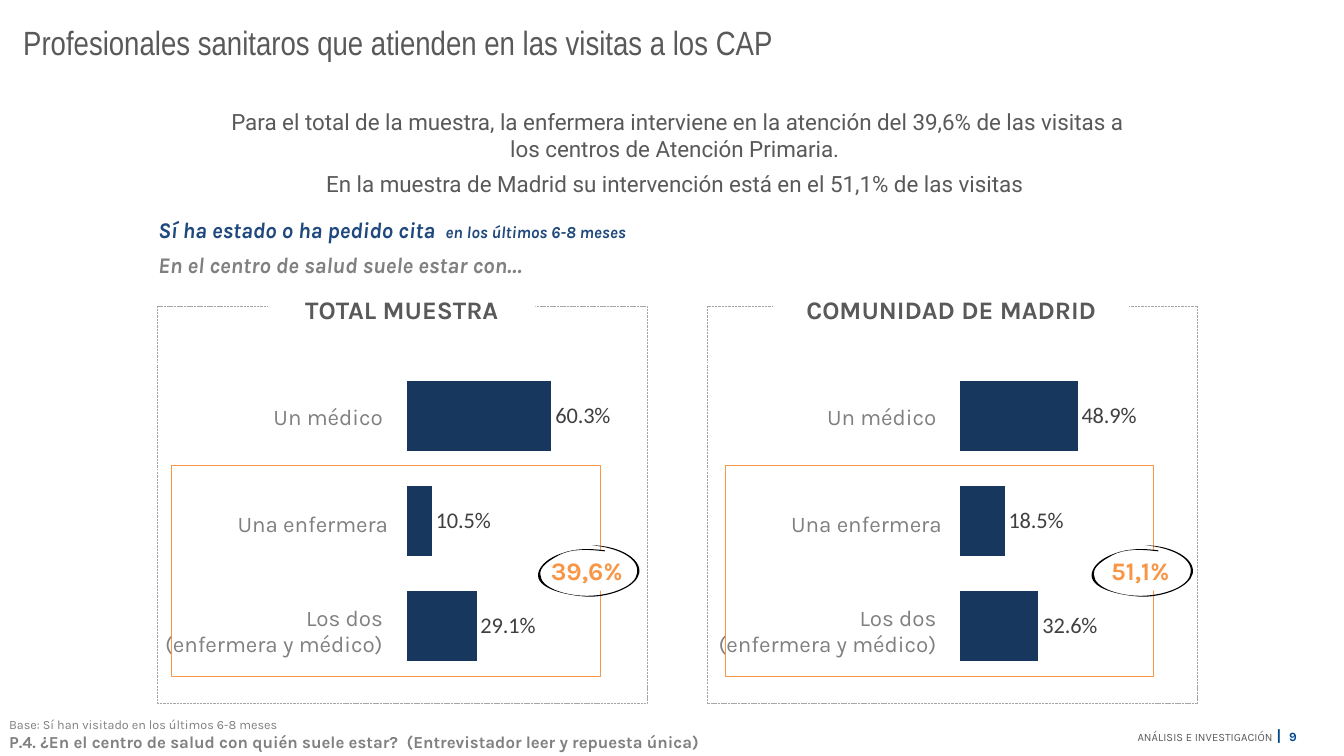
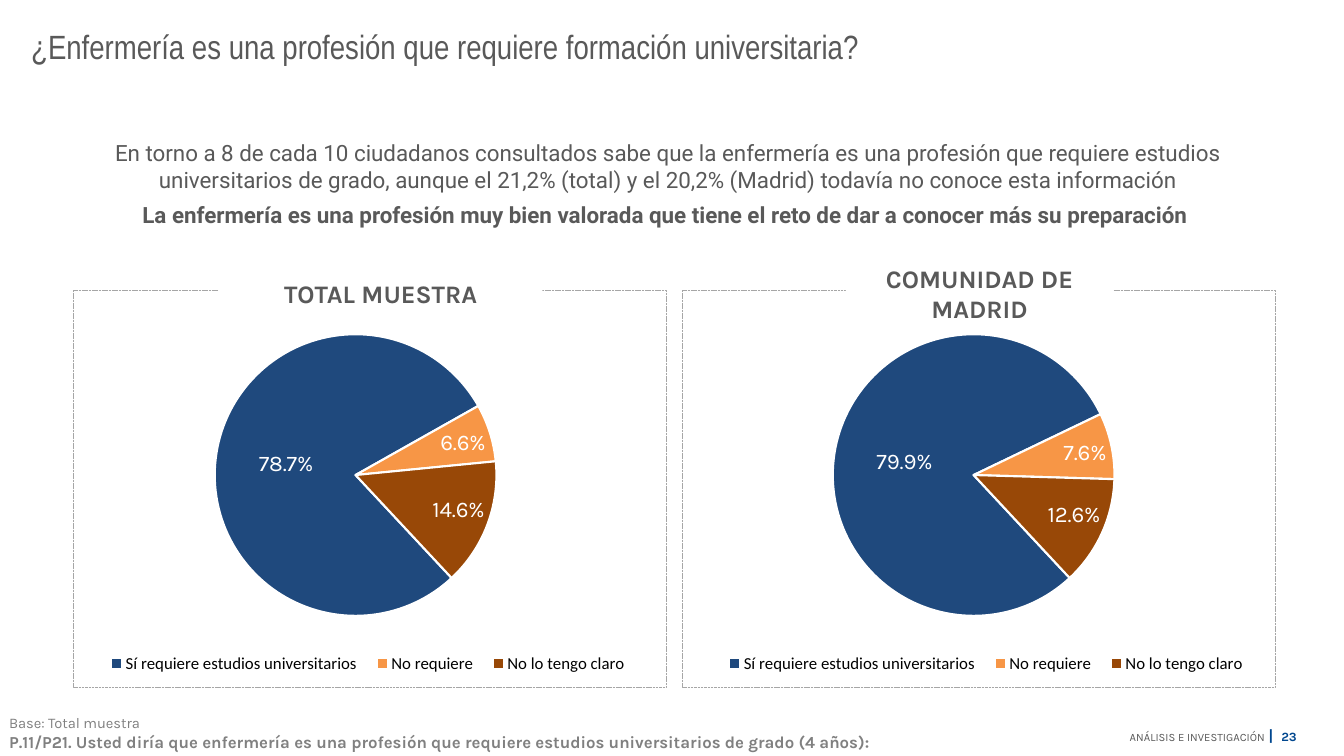
from lxml import etree
from pptx import Presentation
from pptx.chart.data import CategoryChartData
from pptx.dml.color import RGBColor
from pptx.enum.chart import XL_CHART_TYPE, XL_LABEL_POSITION, XL_LEGEND_POSITION
from pptx.enum.dml import MSO_LINE
from pptx.enum.shapes import MSO_SHAPE
from pptx.enum.text import MSO_ANCHOR, MSO_AUTO_SIZE, PP_ALIGN
from pptx.oxml.ns import qn
from pptx.util import Inches, Pt

LEFT, CENTER, RIGHT = PP_ALIGN.LEFT, PP_ALIGN.CENTER, PP_ALIGN.RIGHT
TOP, MIDDLE, BOTTOM = MSO_ANCHOR.TOP, MSO_ANCHOR.MIDDLE, MSO_ANCHOR.BOTTOM
RECTANGLE = MSO_SHAPE.RECTANGLE
DASH = MSO_LINE.SQUARE_DOT
BAR, PIE = XL_CHART_TYPE.BAR_CLUSTERED, XL_CHART_TYPE.PIE

INK, GREY, FRAME_GREY, LABEL_GREY = "595959", "808080", "A6A6A6", "404040"
WHITE, BLACK = "FFFFFF", "000000"
BLUE, NAVY, FOOTER_BLUE = "1F497D", "17375E", "00478F"
ORANGE, BROWN = "F79646", "984807"
PERCENT = "0.0\\%"

HEADING = ("Karla", 18, INK, True)
INTRO = ("Roboto", 16, INK)
INTRO_BOLD = ("Roboto", 16, INK, True)
QUESTION = ("Karla", 12, GREY, True)
ROW_LABEL = ("Karla", 16, GREY)

VISITS = {
    "number": "9",
    "title": ("Profesionales sanitaros que atienden en las visitas a los CAP", (0.13, 0.17, 11.42, 0.5)),
    "intro": ([
        [("Para el total de la muestra, la enfermera interviene en la atención del 39,6% "
          "de las visitas a los centros de Atención Primaria. ", INTRO)],
        [("En la muestra de Madrid su intervención está en el 51,1% de las visitas ", INTRO)],
    ], (2.05, 1.07, 9.34, 0.89)),
    "note": ([
        [("Base: Sí han visitado en los últimos 6-8 meses", ("Karla", 9, GREY))],
        [("P.4. ¿En el centro de salud con quién suele estar?  "
          "(Entrevistador leer y repuesta única)", QUESTION)],
    ], (0, 7.06, 9.19, 0.44)),
    "panels": [
        ("TOTAL MUESTRA", (1.56, 3.04, 4.86, 3.94), (2.66, 2.81, 2.65, 0.53)),
        ("COMUNIDAD DE MADRID", (7.01, 3.04, 4.86, 3.94), (7.67, 2.81, 3.53, 0.53)),
    ],
}
SUBHEADING = [
    [("Sí ha estado o ha pedido cita  ", ("Karla", 16, BLUE, True, True)),
     ("en los últimos 6-8 meses", ("Karla", 12, BLUE, True, True))],
    [("En el centro de salud suele estar con…", ("Karla", 16, GREY, True, True))],
]
ATTENDANTS = ["Un médico ", "Una enfermera", "Los dos \v(enfermera y médico) "]
BAR_PANELS = [((60.3, 10.5, 29.1), "39,6%"), ((48.9, 18.5, 32.6), "51,1%")]
BAR_PANEL_STEP = 5.49

UNIVERSITY = {
    "number": "23",
    "title": ("¿Enfermería es una profesión que requiere formación universitaria?", (0.21, 0.21, 11.19, 0.5)),
    "intro": ([
        [("En torno a 8 de cada 10 ciudadanos consultados sabe que la enfermería es una profesión "
          "que requiere estudios universitarios de grado, aunque el 21,2% (total) y el 20,2% "
          "(Madrid) todavía no conoce esta información", INTRO)],
        [("La enfermería es una profesión muy bien valorada que tiene el reto de dar a conocer "
          "más su preparación ", INTRO_BOLD)],
    ], (0.43, 1.2, 12.39, 1.25)),
    "note": ([
        [("Base: Total muestra", ("Karla", 10.5, GREY))],
        [("P.11/P21. Usted diría que enfermería es una profesión que requiere estudios "
          "universitarios de grado (4 años):", QUESTION)],
    ], (0, 7.04, 11, 0.46)),
    "panels": [
        ("TOTAL MUESTRA", (0.73, 2.88, 5.88, 3.94), (2.17, 2.65, 3.21, 0.53)),
        ("COMUNIDAD DE MADRID", (6.77, 2.88, 5.88, 3.94), (8.39, 2.65, 2.65, 0.53)),
    ],
}
ANSWERS = ["Sí requiere estudios universitarios", "No requiere", "No lo tengo claro"]
ANSWER_COLOURS = [BLUE, ORANGE, BROWN]
PIE_PANELS = [((78.7, 6.6, 14.6), 0.85), ((79.9, 7.6, 12.6), 6.98)]

LOOP_START = (6, 5.46)
LOOP_CURVES = [
    ((5.85, 5.44), (5.7, 5.44), (5.57, 5.49)),
    ((5.45, 5.53), (5.36, 5.6), (5.34, 5.68)),
    ((5.3, 5.84), (5.62, 5.91), (5.84, 5.92)),
    ((6.07, 5.92), (6.31, 5.82), (6.34, 5.69)),
    ((6.37, 5.54), (6.13, 5.41), (5.87, 5.41)),
    ((5.87, 5.4), (5.87, 5.41), (5.87, 5.41)),
    ((6.11, 5.43), (6.34, 5.53), (6.32, 5.68)),
    ((6.31, 5.81), (6.08, 5.9), (5.86, 5.91)),
    ((5.64, 5.92), (5.36, 5.84), (5.36, 5.7)),
    ((5.35, 5.62), (5.45, 5.56), (5.54, 5.51)),
    ((5.67, 5.44), (5.83, 5.45), (6, 5.47)),
    ((6, 5.47), (6, 5.46), (6, 5.46)),
]


def colour(value):
    return RGBColor.from_string(value)


def inches(box):
    return [Inches(length) for length in box]


def style_font(font, name, size, ink, bold=False, italic=False):
    font.name, font.size, font.bold, font.italic = name, Pt(size), bold, italic
    font.color.rgb = colour(ink)


def write(shape, paragraphs, align=LEFT, anchor=TOP, space_after=0, insets=(0.1, 0.05)):
    frame = shape.text_frame
    frame.word_wrap, frame.auto_size = True, MSO_AUTO_SIZE.NONE
    frame.vertical_anchor = anchor
    frame.margin_left = frame.margin_right = Inches(insets[0])
    frame.margin_top = frame.margin_bottom = Inches(insets[1])
    for index, runs in enumerate(paragraphs):
        paragraph = frame.add_paragraph() if index else frame.paragraphs[0]
        paragraph.alignment = align
        paragraph.space_after = Pt(space_after)
        for text, style in runs:
            run = paragraph.add_run()
            run.text = text
            style_font(run.font, *style)


def add_rectangle(slide, box, fill=None, line=None, width=0.25, dash=None):
    shape = slide.shapes.add_shape(RECTANGLE, *inches(box))
    shape.shadow.inherit = False
    if fill:
        shape.fill.solid()
        shape.fill.fore_color.rgb = colour(fill)
    else:
        shape.fill.background()
    if line:
        shape.line.color.rgb = colour(line)
        shape.line.width = Pt(width)
        shape.line.dash_style = dash
    else:
        shape.line.fill.background()
    return shape


def add_base(presentation, content):
    slide = presentation.slides.add_slide(presentation.slide_layouts[5])
    title, box = content["title"]
    placeholder = slide.shapes.title
    placeholder.left, placeholder.top, placeholder.width, placeholder.height = inches(box)
    write(placeholder, [[(title, ("Arial Narrow", 24, INK))]])
    footer = slide.shapes.add_textbox(*inches((11.05, 7.15, 1.91, 0.29)))
    write(footer, [[
        ("ANÁLISIS E INVESTIGACIÓN", ("Karla", 8, INK)),
        (" ", ("Karla", 11, INK)),
        ("|  ", ("Karla", 11, FOOTER_BLUE, True)),
        (content["number"], ("Karla", 9, FOOTER_BLUE, True)),
    ]], RIGHT, MIDDLE)
    note, box = content["note"]
    write(slide.shapes.add_textbox(*inches(box)), note, anchor=BOTTOM, insets=(0.09, 0.04))
    intro, box = content["intro"]
    write(add_rectangle(slide, box, WHITE), intro, CENTER, MIDDLE, 6)
    for heading, frame_box, heading_box in content["panels"]:
        add_rectangle(slide, frame_box, line=FRAME_GREY, dash=DASH)
        write(add_rectangle(slide, heading_box, WHITE), [[(heading, HEADING)]], CENTER, MIDDLE, 6)
    return slide


def manual_layout(box, inner=False):
    layout = etree.Element(qn("c:layout"))
    manual = etree.SubElement(layout, qn("c:manualLayout"))
    settings = [("layoutTarget", "inner")] if inner else []
    settings += [("xMode", "edge"), ("yMode", "edge"), *zip("xywh", box)]
    for tag, value in settings:
        etree.SubElement(manual, qn("c:" + tag)).set("val", str(value))
    return layout


def add_chart(slide, kind, box, categories, values, plot_box, size, ink, label_style):
    data = CategoryChartData(number_format=PERCENT)
    data.categories = categories
    data.add_series("Series 1", values)
    chart = slide.shapes.add_chart(kind, *inches(box), data).chart
    chart.has_title = chart.has_legend = False
    style_font(chart.font, "Calibri", size, ink)
    area = chart._chartSpace.chart.plotArea
    for old in area.findall(qn("c:layout")):
        area.remove(old)
    area.insert(0, manual_layout(plot_box, inner=True))
    labels = chart.plots[0].series[0].data_labels
    labels.show_value = True
    labels.number_format, labels.number_format_is_linked = PERCENT, False
    style_font(labels.font, *label_style)
    return chart, labels


def add_bar_chart(slide, left, values):
    chart, labels = add_chart(slide, BAR, (left, 3.59, 3.29, 3.22), ["1", "2", "3"], values,
                              (0.001, 0.004, 0.724, 0.973), 11, LABEL_GREY,
                              ("Calibri", 16, LABEL_GREY))
    labels.position = XL_LABEL_POSITION.OUTSIDE_END
    plot = chart.plots[0]
    plot.gap_width, plot.vary_by_categories = 50, False
    fill = plot.series[0].format.fill
    fill.solid()
    fill.fore_color.rgb = colour(NAVY)
    chart.category_axis.reverse_order = True
    chart.value_axis.minimum_scale, chart.value_axis.maximum_scale = 0, 100
    chart.value_axis.has_major_gridlines = False
    chart.category_axis.visible = chart.value_axis.visible = False


def add_pie_chart(slide, left, values):
    label_style = ("Karla", 16, WHITE)
    chart, labels = add_chart(slide, PIE, (left, 2.92, 5.66, 4.26), ANSWERS, values,
                              (0.226, 0.093, 0.494, 0.656), 10, BLACK, label_style)
    labels.position = XL_LABEL_POSITION.BEST_FIT
    plot = chart.plots[0]
    plot.vary_by_categories = True
    points = plot.series[0].points
    for index, ink in enumerate(ANSWER_COLOURS):
        point_format = points[index].format
        point_format.fill.solid()
        point_format.fill.fore_color.rgb = colour(ink)
        point_format.line.color.rgb = colour(WHITE)
        point_format.line.width = Pt(1.5)
    main_label = points[0].data_label
    style_font(main_label.font, *label_style)
    main_label.position = XL_LABEL_POSITION.CENTER
    number_format = etree.Element(qn("c:numFmt"), formatCode=PERCENT, sourceLinked="0")
    chart._chartSpace.xpath(".//c:dLbl/c:idx")[0].addnext(number_format)
    pie = chart._chartSpace.xpath(".//c:pieChart")[0]
    for old in pie.findall(qn("c:firstSliceAng")):
        pie.remove(old)
    etree.SubElement(pie, qn("c:firstSliceAng")).set("val", "137")
    chart.has_legend = True
    chart.legend.position = XL_LEGEND_POSITION.BOTTOM
    chart.legend.include_in_layout = False
    style_font(chart.legend.font, "Calibri", 12, BLACK)
    legend = chart._chartSpace.xpath(".//c:legend")[0]
    for old in legend.findall(qn("c:layout")):
        legend.remove(old)
    legend.find(qn("c:legendPos")).addnext(manual_layout((0.02, 0.82, 0.95, 0.08)))


def add_row_labels(slide, left):
    box = inches((left, 3.61, 2.68, 3.19))
    table = slide.shapes.add_table(len(ATTENDANTS), 1, *box).table
    table.first_row = table.horz_banding = False
    for index, label in enumerate(ATTENDANTS):
        cell = table.cell(index, 0)
        cell.fill.background()
        cell.vertical_anchor = MIDDLE
        cell.margin_left = cell.margin_right = cell.margin_top = Inches(0.01)
        cell.margin_bottom = 0
        paragraph = cell.text_frame.paragraphs[0]
        paragraph.text = label
        paragraph.alignment = RIGHT
        for run in paragraph.runs:
            style_font(run.font, *ROW_LABEL)


def add_loop(slide, offset):
    points = [LOOP_START] + [point for curve in LOOP_CURVES for point in curve]
    outline = [(Inches(x + offset), Inches(y)) for x, y in points]
    builder = slide.shapes.build_freeform(*outline[0])
    builder.add_line_segments(outline[1:], close=True)
    loop = builder.convert_to_shape()
    segments = loop._element.xpath(".//a:lnTo")[:len(points) - 1]
    for start in range(0, len(segments), 3):
        curve = etree.Element(qn("a:cubicBezTo"))
        segments[start].addprevious(curve)
        for segment in segments[start:start + 3]:
            curve.append(segment[0])
            segment.getparent().remove(segment)
    loop.shadow.inherit = False
    loop.fill.solid()
    loop.fill.fore_color.rgb = colour(BLACK)
    loop.line.fill.background()


def main():
    presentation = Presentation()
    presentation.slide_width, presentation.slide_height = Inches(13.33), Inches(7.5)

    slide = add_base(presentation, VISITS)
    write(add_rectangle(slide, (1.47, 2.09, 5.83, 0.72), WHITE), SUBHEADING, space_after=6)
    for index, (values, total) in enumerate(BAR_PANELS):
        offset = index * BAR_PANEL_STEP
        add_row_labels(slide, 1.18 + offset)
        add_bar_chart(slide, 4.03 + offset, values)
        add_rectangle(slide, (1.7 + offset, 4.62, 4.25, 2.09), line=ORANGE, width=0.5)
        badge = add_rectangle(slide, (5.33 + offset, 5.46, 0.98, 0.4), WHITE)
        write(badge, [[(total, ("Karla", 18, ORANGE, True))]], CENTER)
        add_loop(slide, offset)

    slide = add_base(presentation, UNIVERSITY)
    for values, left in PIE_PANELS:
        add_pie_chart(slide, left, values)

    presentation.save("out.pptx")


if __name__ == "__main__":
    main()
